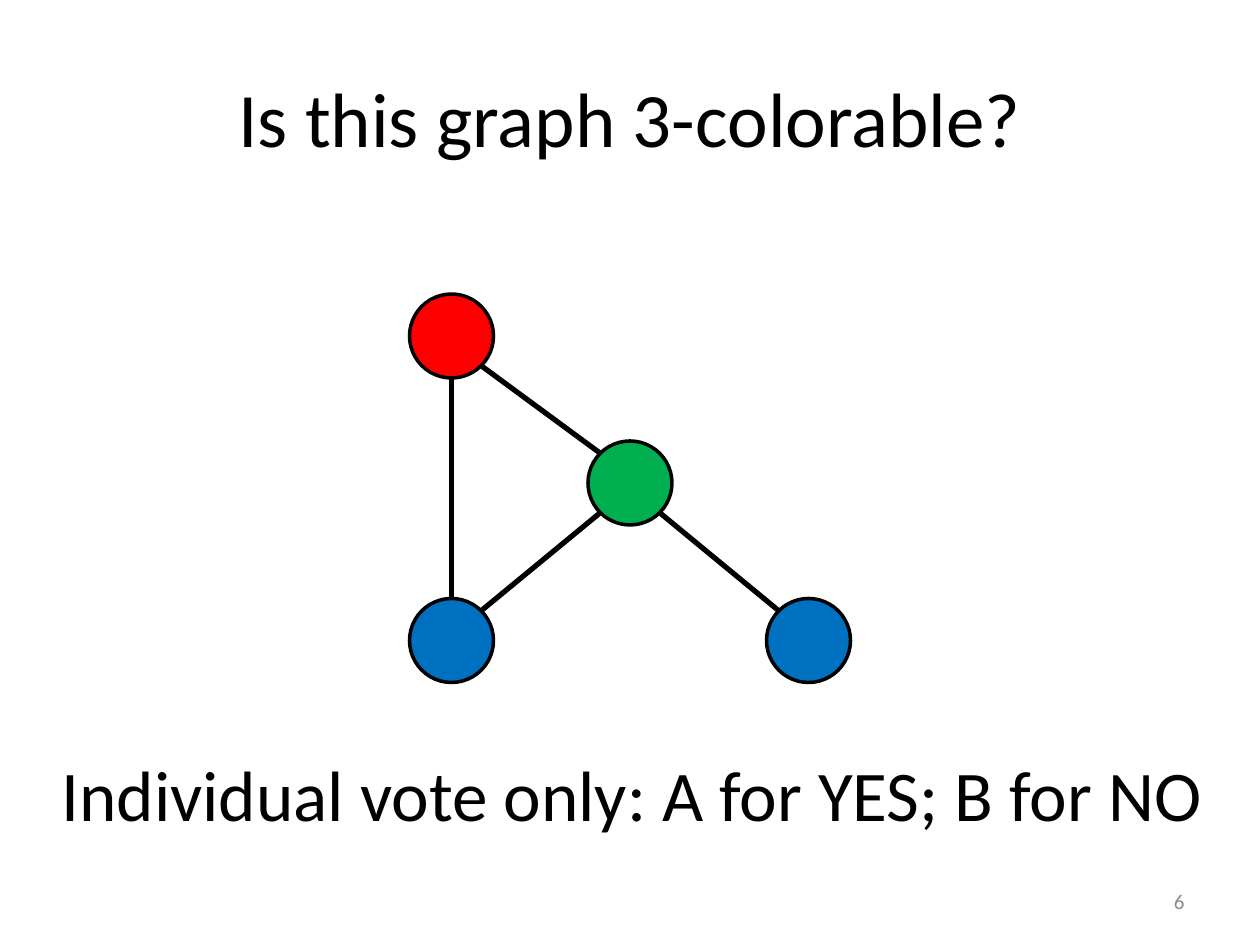
from math import hypot

from pptx import Presentation
from pptx.dml.color import RGBColor
from pptx.enum.shapes import MSO_CONNECTOR, MSO_SHAPE
from pptx.enum.text import MSO_ANCHOR, PP_ALIGN
from pptx.oxml.ns import qn
from pptx.util import Inches, Pt
from lxml.etree import SubElement

COLUMNS, ROWS = 120, 90
CELL = Inches(10) / COLUMNS
RADIUS = 4
BLACK = "000000"

# vertex: (centre column, centre row, colour)
VERTICES = {
    "top": (43, 32, "FF0000"),
    "left": (43, 61, "0070C0"),
    "middle": (60, 46, "00B050"),
    "right": (77, 61, "0070C0"),
}
EDGES = [("top", "middle"), ("middle", "right"), ("left", "middle"), ("top", "left")]


def color(hex_string):
    return RGBColor.from_string(hex_string)


def cells(*counts):
    return [round(count * CELL) for count in counts]


def sign(number):
    return (number > 0) - (number < 0)


class GraphSlide:
    """Holds the style and the current slide; lengths are grid cells."""

    font = "Calibri"
    outline = 2
    edge_width = 3

    def __init__(self, deck):
        self.slide = deck.slides.add_slide(deck.slide_layouts[5])
        self.shapes = self.slide.shapes

    def set_text(self, box, text, size, align=PP_ALIGN.CENTER, ink=BLACK):
        frame = box.text_frame
        frame.text = text
        frame.word_wrap = True
        frame.vertical_anchor = MSO_ANCHOR.MIDDLE
        paragraph = frame.paragraphs[0]
        paragraph.alignment = align
        font = paragraph.runs[0].font
        for name, value in {"name": self.font, "size": Pt(size)}.items():
            setattr(font, name, value)
        font.color.rgb = color(ink)

    def title(self, text, area, size):
        heading = self.shapes.title
        for name, value in zip(("left", "top", "width", "height"), cells(*area)):
            setattr(heading, name, value)
        self.set_text(heading, text, size)

    def label(self, text, area, size, **style):
        self.set_text(self.shapes.add_textbox(*cells(*area)), text, size, **style)

    def vertex(self, column, row, fill):
        circle = self.shapes.add_shape(
            MSO_SHAPE.OVAL,
            *cells(column - RADIUS, row - RADIUS, 2 * RADIUS, 2 * RADIUS))
        circle.shadow.inherit = False
        circle.fill.solid()
        circle.fill.fore_color.rgb = color(fill)
        circle.line.color.rgb = color(BLACK)
        circle.line.width = Pt(self.outline)

    def edge(self, start, end):
        """Join two vertices at the nearest of the eight compass points."""
        (x1, y1, _), (x2, y2, _) = start, end
        step_x, step_y = sign(x2 - x1), sign(y2 - y1)
        reach = RADIUS / hypot(step_x, step_y)
        dx, dy = step_x * reach, step_y * reach
        line = self.shapes.add_connector(
            MSO_CONNECTOR.STRAIGHT, *cells(x1 + dx, y1 + dy, x2 - dx, y2 - dy))
        line.line.color.rgb = color(BLACK)
        line.line.width = Pt(self.edge_width)
        SubElement(line._element.spPr, qn("a:effectLst"))


def main():
    deck = Presentation()
    deck.slide_width, deck.slide_height = cells(COLUMNS, ROWS)
    page = GraphSlide(deck)
    page.title("Is this graph 3-colorable?", (6, 3.6, 108, 15), 44)
    page.label("6", (86, 83.4, 28, 4.8), 12, align=PP_ALIGN.RIGHT, ink="8C8C8C")
    for vertex in VERTICES.values():
        page.vertex(*vertex)
    for start, end in EDGES:
        page.edge(VERTICES[start], VERTICES[end])
    page.label("Individual vote only: A for YES; B for NO", (2.9, 68, 114.5, 15), 40.7)
    deck.save("out.pptx")


if __name__ == "__main__":
    main()
